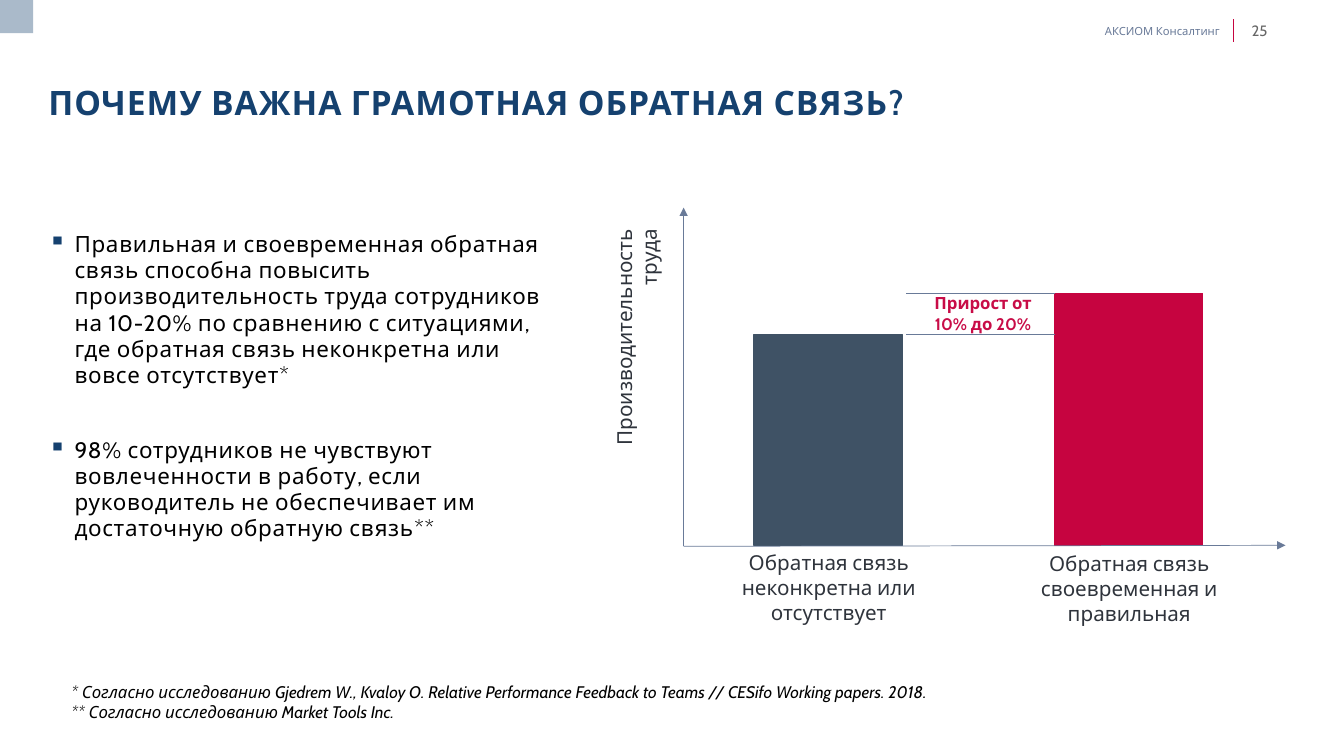
from dataclasses import dataclass, field
from typing import Any, Optional

import lxml.etree
import pptx
import pptx.dml.color
import pptx.enum.shapes
import pptx.enum.text
import pptx.oxml.ns
import pptx.util

Inches = pptx.util.Inches
Pt = pptx.util.Pt
RGBColor = pptx.dml.color.RGBColor
Align = pptx.enum.text.PP_ALIGN
Anchor = pptx.enum.text.MSO_ANCHOR
qn = pptx.oxml.ns.qn

NAVY = RGBColor(0x15, 0x41, 0x6F)
SLATE = RGBColor(0x3F, 0x52, 0x65)
CRIMSON = RGBColor(0xC6, 0x04, 0x40)
RASPBERRY = RGBColor(0xC8, 0x0C, 0x47)
STEEL = RGBColor(0x69, 0x7A, 0x98)
PALE_BLUE = RGBColor(0xAA, 0xBA, 0xCA)
GREY = RGBColor(0x66, 0x66, 0x66)
CHARCOAL = RGBColor(0x2F, 0x34, 0x3C)
BLACK = RGBColor(0, 0, 0)

FONT = "Cabin"
DEFAULT_INSETS = (0.1, 0.05, 0.1, 0.05)
NO_INSETS = (0, 0, 0, 0)


@dataclass
class Label:
    lines: list[str]
    left: float
    top: float
    width: float
    height: float
    font: dict[str, Any]
    paragraph: dict[str, Any] = field(default_factory=dict)
    insets: tuple[float, float, float, float] = DEFAULT_INSETS
    anchor: Any = Anchor.TOP
    rotation: float = 0
    indent: float = 0
    hanging: float = 0
    tracking: float = 0
    gap: Optional[float] = None
    bullet: str = ""


@dataclass
class Block:
    left: float
    top: float
    width: float
    height: float
    color: RGBColor
    outlined: bool = True


@dataclass
class Stroke:
    start: tuple[float, float]
    end: tuple[float, float]
    color: RGBColor = STEEL
    arrow: bool = False


def apply_format(target: Any, values: dict[str, Any]) -> None:
    for name, value in values.items():
        setattr(target, name, value)


def add_label(page: Any, label: Label) -> None:
    box = page.shapes.add_textbox(Inches(label.left), Inches(label.top),
                                  Inches(label.width), Inches(label.height))
    box.rotation = label.rotation
    frame = box.text_frame
    left, top, right, bottom = (Inches(inset) for inset in label.insets)
    apply_format(frame, {"word_wrap": True, "vertical_anchor": label.anchor,
                         "margin_left": left, "margin_top": top,
                         "margin_right": right, "margin_bottom": bottom})
    for index, line in enumerate(label.lines):
        para = frame.add_paragraph() if index else frame.paragraphs[0]
        apply_format(para, label.paragraph)
        if index and label.gap is not None:
            para.space_before = Pt(label.gap)
        properties = para._p.get_or_add_pPr()
        if label.indent:
            properties.set("marL", str(Inches(label.indent)))
            properties.set("indent", str(-Inches(label.hanging)))
        if label.bullet:
            color = lxml.etree.SubElement(properties, qn("a:buClr"))
            lxml.etree.SubElement(color, qn("a:srgbClr"), val=str(NAVY))
            lxml.etree.SubElement(properties, qn("a:buSzPct"), val="110000")
            lxml.etree.SubElement(properties, qn("a:buChar"), char=label.bullet)
        span = para.add_run()
        span.text = line
        span.font.name = FONT
        for name, value in label.font.items():
            if name == "color":
                span.font.color.rgb = value
            else:
                setattr(span.font, name, value)
        if label.tracking:
            span._r.get_or_add_rPr().set("spc", str(round(label.tracking * 100)))


def add_block(page: Any, block: Block) -> None:
    shape = page.shapes.add_shape(
        pptx.enum.shapes.MSO_SHAPE.RECTANGLE, Inches(block.left),
        Inches(block.top), Inches(block.width), Inches(block.height))
    shape.shadow.inherit = False
    shape.fill.solid()
    shape.fill.fore_color.rgb = block.color
    if block.outlined:
        shape.line.color.rgb = block.color
        shape.line.width = Pt(1)
    else:
        shape.line.fill.background()


def add_stroke(page: Any, stroke: Stroke) -> None:
    ends = (Inches(value) for value in stroke.start + stroke.end)
    connector = page.shapes.add_connector(
        pptx.enum.shapes.MSO_CONNECTOR.STRAIGHT, *ends)
    connector.line.color.rgb = stroke.color
    connector.line.width = Pt(0.5)
    properties = connector.element.spPr
    if stroke.arrow:
        lxml.etree.SubElement(properties.find(qn("a:ln")), qn("a:tailEnd"),
                              type="triangle")
    lxml.etree.SubElement(properties, qn("a:effectLst"))


# Chart geometry
BASE = 5.41
LOW_TOP, HIGH_TOP = 3.32, 2.91
BAR_WIDTH = 1.47
LOW_LEFT, HIGH_LEFT = 7.48, 10.46
ORIGIN = (6.78, 5.42)
AXIS_FONT = {"size": Pt(14.7), "color": CHARCOAL}

BLOCKS = [
    Block(0, 0, 0.33, 0.33, PALE_BLUE, outlined=False),
    Block(LOW_LEFT, LOW_TOP, BAR_WIDTH, BASE - LOW_TOP, SLATE),
    Block(HIGH_LEFT, 3.11, BAR_WIDTH, BASE - 3.11, CRIMSON),
    Block(HIGH_LEFT, HIGH_TOP, BAR_WIDTH, 0.4, CRIMSON),
]

STROKES = [
    Stroke((12.23, 0.19), (12.23, 0.42), CRIMSON),
    *(Stroke((8.99, level), (HIGH_LEFT, level)) for level in (LOW_TOP, HIGH_TOP)),
    Stroke(ORIGIN, (6.78, 2.06), arrow=True),
    Stroke(ORIGIN, (12.75, 5.41), arrow=True),
]

LABELS = [
    # Header
    Label(["АКСИОМ Консалтинг"], 10.73, 0.24, 1.37, 0.13,
          {"size": Pt(8), "color": STEEL}, {"alignment": Align.RIGHT},
          NO_INSETS, Anchor.MIDDLE),
    Label(["25"], 12.15, 0.24, 0.42, 0.13,
          {"size": Pt(10.7), "color": GREY}, {"alignment": Align.RIGHT},
          NO_INSETS, Anchor.MIDDLE),
    Label(["ПОЧЕМУ ВАЖНА ГРАМОТНАЯ ОБРАТНАЯ СВЯЗЬ?"], 0.48, 0.82, 11.97, 0.79,
          {"size": Pt(24), "color": NAVY, "bold": True},
          {"line_spacing": Pt(28)}, NO_INSETS, tracking=0.7),
    # Arguments
    Label(["Правильная и своевременная обратная связь способна повысить "
           "производительность труда сотрудников на 10-20% по сравнению с "
           "ситуациями, где обратная связь неконкретна или вовсе отсутствует*",
           "98% сотрудников не чувствуют вовлеченности в работу, если "
           "руководитель не обеспечивает им достаточную обратную связь**"],
          0.48, 2.29, 5.15, 4.84, {"size": Pt(16), "color": BLACK},
          {"line_spacing": Pt(18.7), "space_after": Pt(8)}, (0, 0, 0.1, 0.05),
          indent=0.26, hanging=0.26, tracking=0.5, gap=26.7, bullet="▪"),
    # Footnotes
    Label(["* Согласно исследованию Gjedrem W., Kvaloy O. Relative Performance "
           "Feedback to Teams // CESifo Working papers. 2018.",
           "** Согласно исследованию Market Tools Inc."],
          0.11, 6.71, 12.16, 0.5,
          {"size": Pt(12), "color": BLACK, "italic": True}, indent=0.5),
    # Chart captions
    Label(["Обратная связь неконкретна или отсутствует"], 6.92, 5.41, 2.6, 0.84,
          AXIS_FONT, {"alignment": Align.CENTER}),
    Label(["Обратная связь своевременная и правильная"], 9.9, 5.42, 2.6, 0.84,
          AXIS_FONT, {"alignment": Align.CENTER}),
    Label(["Производительность труда"], 5.06, 3.13, 2.5, 0.59,
          AXIS_FONT, {"alignment": Align.RIGHT}, rotation=270),
    Label(["Прирост от 10% до 20%"], 9.03, 2.86, 1.44, 0.5,
          {"size": Pt(12), "color": RASPBERRY, "bold": True},
          {"alignment": Align.CENTER}),
]


def main() -> None:
    deck = pptx.Presentation()
    deck.slide_width, deck.slide_height = Inches(13.33), Inches(7.5)
    page = deck.slides.add_slide(deck.slide_layouts[6])
    for block in BLOCKS:
        add_block(page, block)
    for stroke in STROKES:
        add_stroke(page, stroke)
    for label in LABELS:
        add_label(page, label)
    deck.save("out.pptx")


if __name__ == "__main__":
    main()
